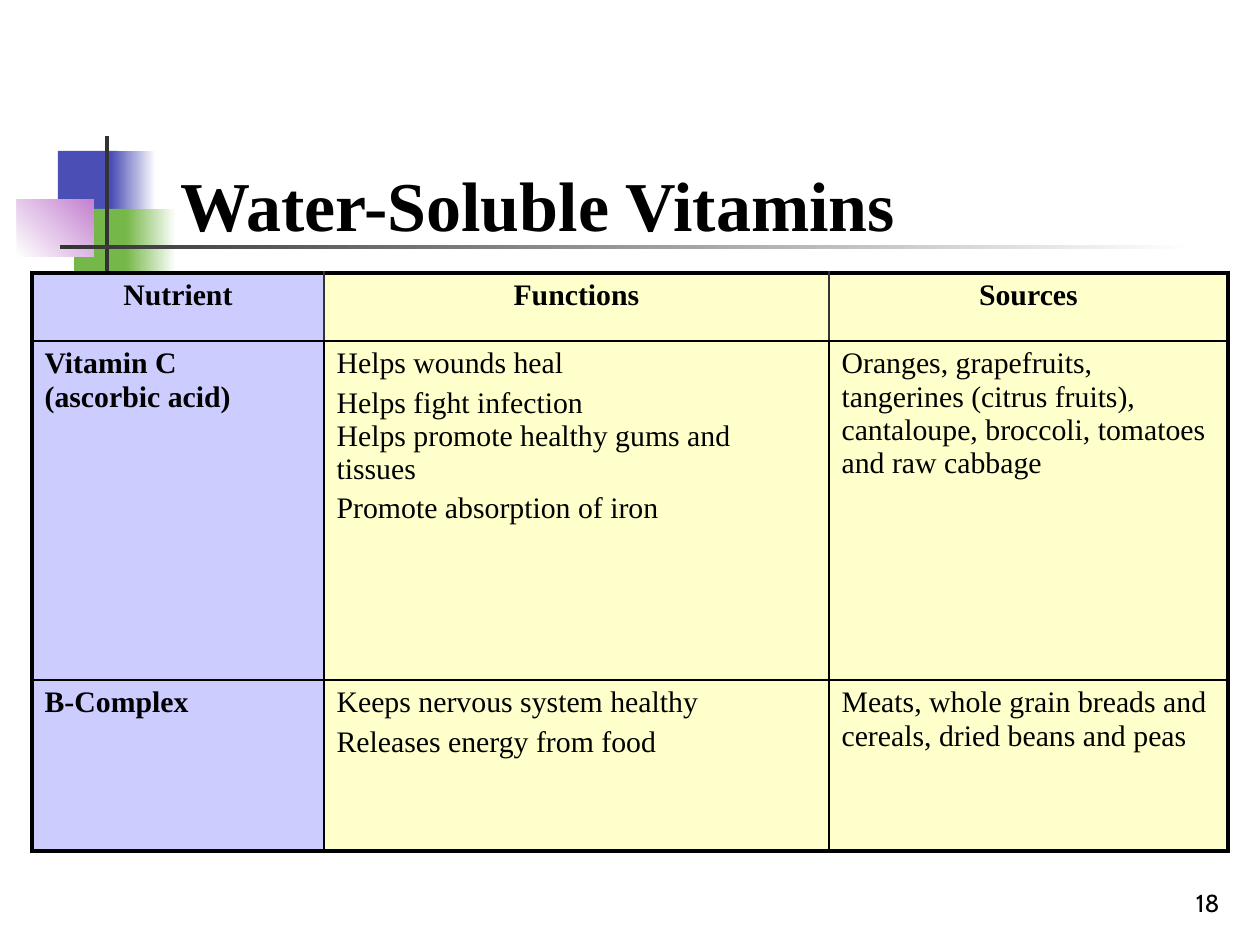
from itertools import product

from lxml.etree import SubElement
from pptx import Presentation
from pptx.dml.color import RGBColor
from pptx.enum.shapes import MSO_SHAPE
from pptx.enum.text import MSO_ANCHOR, MSO_AUTO_SIZE, PP_ALIGN
from pptx.oxml.ns import qn
from pptx.util import Inches, Pt

PX_PER_INCH = 126
BLACK, GRAY, WHITE = "000000", "333333", "FFFFFF"
BLUE, GREEN, PINK = "4B4EB5", "76B749", "C481CF"
LILAC, CREAM = "CCCCFF", "FFFFCC"


def px(length):
    return Inches(length / PX_PER_INCH)


def color(value):
    return RGBColor.from_string(value)


class SlideBuilder:
    serif = "Times New Roman"
    sans = "Cabin"

    def __init__(self, page):
        self.page = page

    def style(self, para, size, font, bold=False, align=PP_ALIGN.LEFT):
        para.alignment = align
        para.font.size = Pt(size)
        para.font.name = font
        para.font.bold = bold
        para.font.color.rgb = color(BLACK)

    def place(self, shape, left, top, width, height):
        shape.left, shape.top = px(left), px(top)
        shape.width, shape.height = px(width), px(height)

    def block(self, left, top, width, height, start, end=None, angle=0):
        """Draw a borderless rectangle, solid or fading from start to end."""
        box = self.page.shapes.add_shape(
            MSO_SHAPE.RECTANGLE, px(left), px(top), px(width), px(height))
        box.shadow.inherit = False
        box.line.fill.background()
        if end is None:
            box.fill.solid()
            box.fill.fore_color.rgb = color(start)
            return
        box.fill.gradient()
        box.fill.gradient_angle = angle
        for stop, value in zip(box.fill.gradient_stops, (start, end)):
            stop.color.rgb = color(value)

    def title(self, text, *bounds):
        box = self.page.shapes.title
        self.place(box, *bounds)
        frame = box.text_frame
        frame.text = text
        frame.auto_size = MSO_AUTO_SIZE.NONE
        frame.vertical_anchor = MSO_ANCHOR.BOTTOM
        self.style(frame.paragraphs[0], 40, self.serif, bold=True)

    def page_number(self, text, *bounds):
        box = self.page.shapes.add_textbox(*map(px, bounds))
        frame = box.text_frame
        frame.word_wrap = True
        frame.vertical_anchor = MSO_ANCHOR.BOTTOM
        frame.text = text
        self.style(frame.paragraphs[0], 14, self.sans, align=PP_ALIGN.RIGHT)

    def border(self, cell, side, width, value):
        line = SubElement(cell._tc.get_or_add_tcPr(), qn("a:ln" + side), w=str(Pt(width)))
        fill = SubElement(line, qn("a:solidFill"))
        SubElement(fill, qn("a:srgbClr"), val=value)

    def cell(self, cell, lines, fill, bold, align):
        frame = cell.text_frame
        for index, line in enumerate(lines):
            para = frame.add_paragraph() if index else frame.paragraphs[0]
            para.text = line
            para.space_before = Pt(3.4 if index else 0)
            self.style(para, 17, self.serif, bold, align)
        cell.fill.solid()
        cell.fill.fore_color.rgb = color(fill)

    def table(self, left, top, widths, heights, rows):
        table = self.page.shapes.add_table(
            len(heights), len(widths), px(left), px(top),
            px(sum(widths)), px(sum(heights))).table
        for column, width in zip(table.columns, widths):
            column.width = px(width)
        for row, height in zip(table.rows, heights):
            row.height = px(height)
        last_row, last_column = len(heights) - 1, len(widths) - 1
        for r, c in product(range(len(heights)), range(len(widths))):
            cell = table.cell(r, c)
            # Heavy outer frame, thin inner rules, gray between the headings
            outer = {"L": c == 0, "R": c == last_column,
                     "T": r == 0, "B": r == last_row}
            for side, heavy in outer.items():
                soft = r == 0 and side in "LR" and not heavy
                self.border(cell, side, 2.25 if heavy else 1, GRAY if soft else BLACK)
            self.cell(cell, rows[r][c], CREAM if c else LILAC, r == 0 or c == 0,
                      PP_ALIGN.LEFT if r else PP_ALIGN.CENTER)


def main():
    deck = Presentation()
    deck.slide_width, deck.slide_height = Inches(10), Inches(7.5)
    builder = SlideBuilder(deck.slides.add_slide(deck.slide_layouts[5]))

    # Corner decoration
    builder.block(58, 151, 60, 66, BLUE)
    builder.block(111, 151, 45, 66, BLUE, WHITE)
    builder.block(74, 209, 58, 66, GREEN)
    builder.block(126, 209, 50, 66, GREEN, WHITE)
    builder.block(17, 199, 77, 58, WHITE, PINK, angle=45)
    builder.block(105, 136, 4, 145, GRAY)
    builder.block(60, 245, 1134, 4, GRAY, WHITE)

    # Page number and title
    builder.page_number("18", 970, 861, 262, 63)
    builder.title("Water-Soluble Vitamins", 168, 32, 1061, 220)

    # Vitamin table
    builder.table(32, 273, [292, 505, 399], [68, 339, 171], [
        [["Nutrient"], ["Functions"], ["Sources"]],
        [["Vitamin C\n(ascorbic acid)"],
         ["Helps wounds heal",
          "Helps fight infection\nHelps promote healthy gums and tissues",
          "Promote absorption of iron"],
         ["Oranges, grapefruits, tangerines (citrus fruits), "
          "cantaloupe, broccoli, tomatoes and raw cabbage"]],
        [["B-Complex"],
         ["Keeps nervous system healthy", "Releases energy from food"],
         ["Meats, whole grain breads and cereals, dried beans and peas"]],
    ])
    deck.save("out.pptx")


if __name__ == "__main__":
    main()
